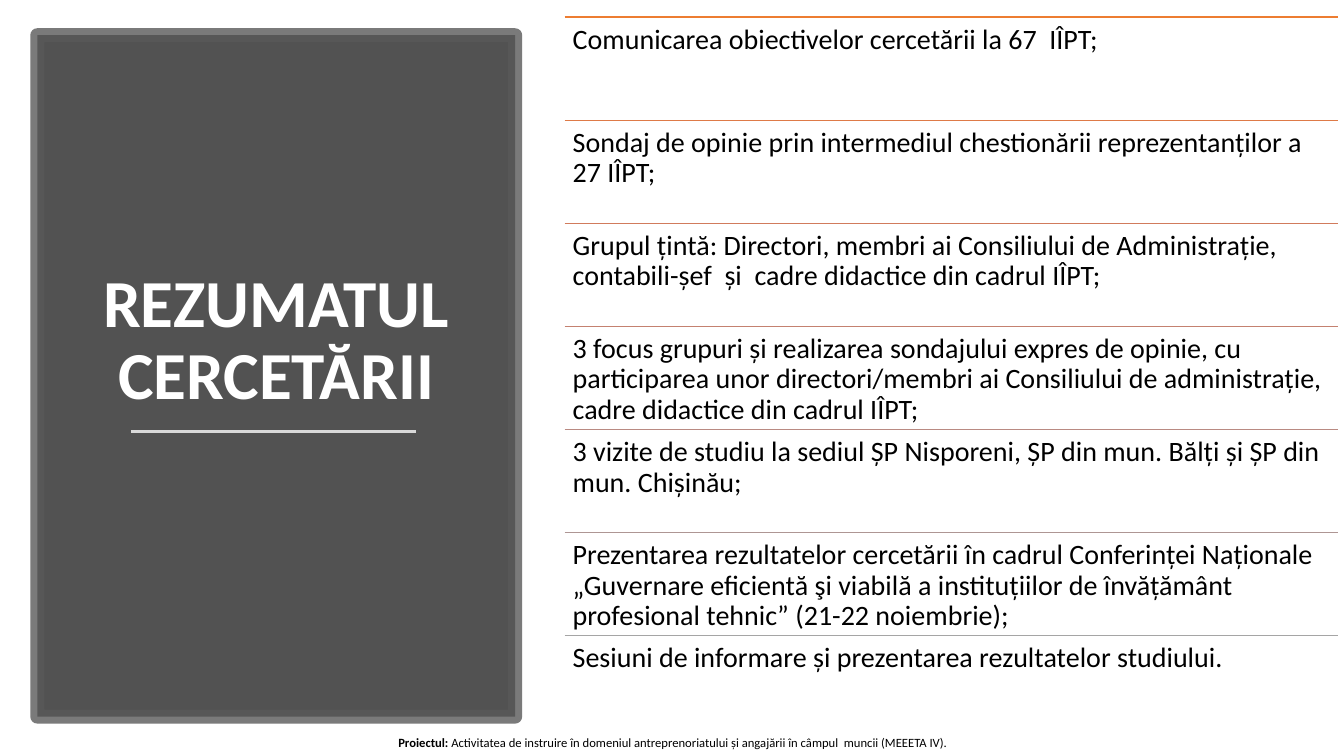
import pptx
import pptx.dml.color
import pptx.enum.shapes
import pptx.enum.text
import pptx.oxml
import pptx.oxml.ns
import pptx.util

Inches = pptx.util.Inches
Pt = pptx.util.Pt
Align = pptx.enum.text.PP_ALIGN
Anchor = pptx.enum.text.MSO_ANCHOR

TITLE = "REZUMATUL CERCETĂRII"
STEPS = [
    ("ED7D31", "Comunicarea obiectivelor cercetării la 67  IÎPT;"),
    ("DE7A47", "Sondaj de opinie prin intermediul chestionării reprezentanților a 27 IÎPT;"),
    ("D17B5C", "Grupul țintă: Directori, membri ai Consiliului de Administrație,  "
               "contabili-șef  și  cadre didactice din cadrul IÎPT;"),
    ("C48170", "3 focus grupuri și realizarea sondajului expres de opinie, cu participarea unor "
               "directori/membri ai Consiliului de administrație, cadre didactice din cadrul IÎPT;"),
    ("B98A82", "3 vizite de studiu la sediul ȘP Nisporeni, ȘP din mun. Bălți și ȘP din mun. Chișinău;"),
    ("AE9694", "Prezentarea rezultatelor cercetării în cadrul Conferinței Naționale „Guvernare eficientă "
               "şi viabilă a instituțiilor de învățământ profesional tehnic” (21-22 noiembrie);"),
    ("A5A5A5", "Sesiuni de informare și prezentarea rezultatelor studiului."),
]
PROJECT_LABEL = "Proiectul: "
PROJECT_NAME = ("Activitatea de instruire în domeniul antreprenoriatului și angajării în câmpul  "
                "muncii (MEEETA IV).")

STEPS_LEFT, STEPS_TOP, STEPS_WIDTH, STEPS_HEIGHT = 5.6, 0.17, 7.67, 7.16

presentation = pptx.Presentation()
presentation.slide_width = Inches(13.33)
presentation.slide_height = Inches(7.5)
slide = presentation.slides.add_slide(presentation.slide_layouts[6])


def color(value):
    return pptx.dml.color.RGBColor.from_string(value)


def set_opacity(fill, percent):
    element = fill.fore_color._xFill[0]
    alpha = pptx.oxml.parse_xml(f'<a:alpha {pptx.oxml.ns.nsdecls("a")} val="{percent * 1000}"/>')
    element.append(alpha)


def add_rule(left, top, right, line_color, width):
    rule = slide.shapes.add_connector(
        pptx.enum.shapes.MSO_CONNECTOR.STRAIGHT, Inches(left), Inches(top), Inches(right), Inches(top))
    rule.line.color.rgb = color(line_color)
    rule.line.width = Pt(width)
    rule._element.spPr.append(pptx.oxml.parse_xml(f'<a:effectLst {pptx.oxml.ns.nsdecls("a")}/>'))


def add_text(*runs, box, size, text_color="000000", bold=(False,), align=Align.LEFT,
             anchor=Anchor.TOP, inset=(0.1, 0.05), space_after=0):
    frame = slide.shapes.add_textbox(*map(Inches, box)).text_frame
    frame.word_wrap = True
    frame.vertical_anchor = anchor
    frame.margin_left = frame.margin_right = Inches(inset[0])
    frame.margin_top = frame.margin_bottom = Inches(inset[1])
    paragraph = frame.paragraphs[0]
    paragraph.alignment = align
    paragraph.line_spacing = 0.9
    paragraph.space_after = Pt(space_after)
    for text, is_bold in zip(runs, bold):
        run = paragraph.add_run()
        run.text = text
        run.font.name = "Calibri"
        run.font.size = Pt(size)
        run.font.bold = is_bold
        run.font.color.rgb = color(text_color)


panel = slide.shapes.add_shape(
    pptx.enum.shapes.MSO_SHAPE.RECTANGLE, Inches(0.37), Inches(0.35), Inches(4.74), Inches(6.76))
panel.shadow.inherit = False
panel.fill.solid()
panel.fill.fore_color.rgb = color("404040")
set_opacity(panel.fill, 90)
panel.line.color.rgb = color("595959")
panel.line.width = Pt(10)
set_opacity(panel.line.fill, 80)

add_text(TITLE, box=(0.74, 1, 4, 3.16), size=48, text_color="FFFFFF", bold=(True,),
         align=Align.CENTER, anchor=Anchor.BOTTOM)
add_rule(1.3, 4.28, 4.13, "D9D9D9", 1.75)

step_height = STEPS_HEIGHT / len(STEPS)
for index, (rule_color, step) in enumerate(STEPS):
    top = STEPS_TOP + index * step_height
    add_rule(STEPS_LEFT, top, STEPS_LEFT + STEPS_WIDTH, rule_color, 1)
    add_text(step, box=(STEPS_LEFT, top, STEPS_WIDTH, step_height), size=20,
             inset=(0.08, 0.08), space_after=7)

add_text(PROJECT_LABEL, PROJECT_NAME, box=(3.78, 7.21, 5.78, 0.33), size=9, bold=(True, False),
         align=Align.CENTER, anchor=Anchor.MIDDLE, space_after=6)

presentation.save("out.pptx")
